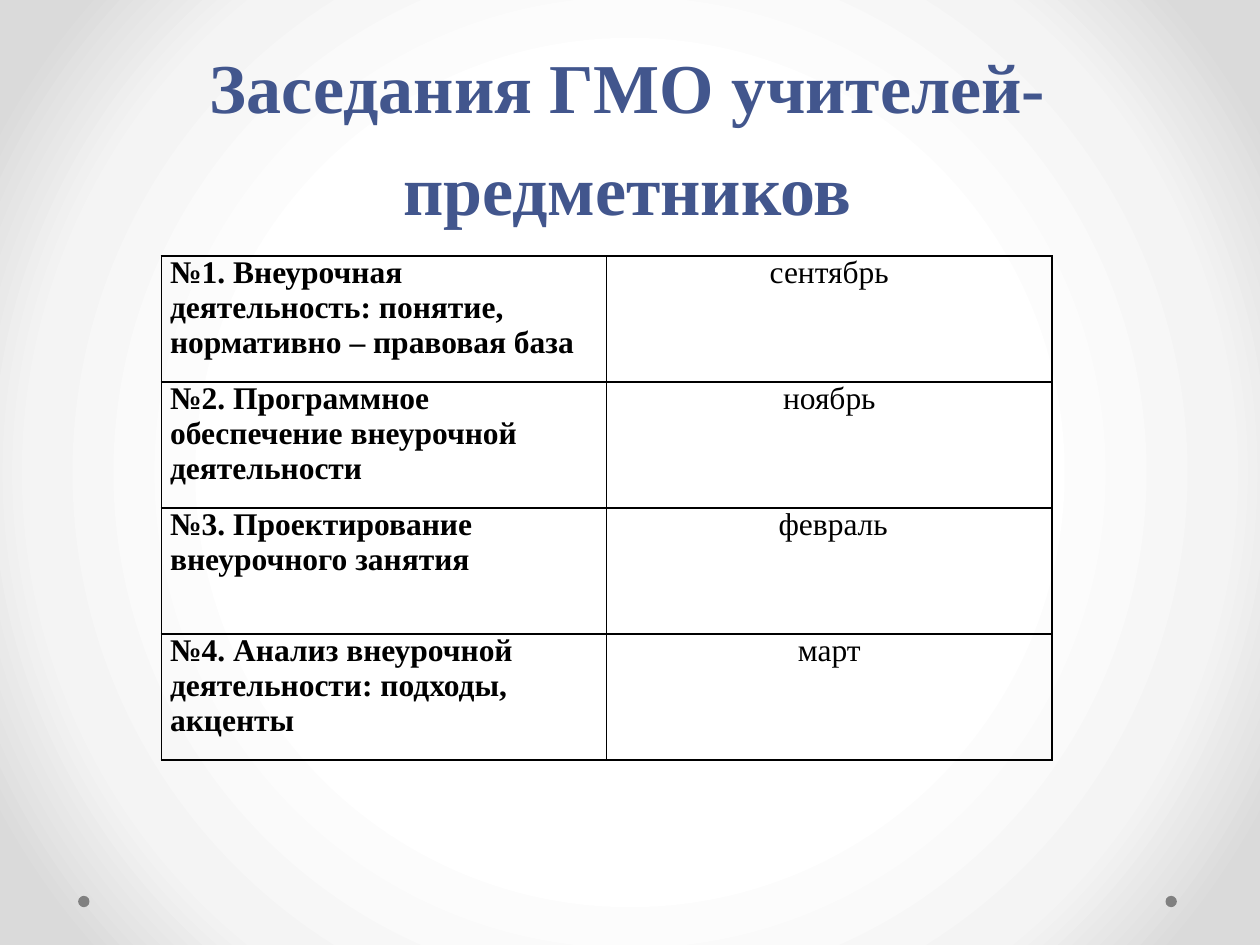
from pptx import Presentation
from pptx import util as u
from pptx.dml.color import RGBColor
from pptx.enum import shapes, text
from pptx.oxml import parse_xml
from pptx.oxml.ns import nsdecls

# Content
HEAD = "Заседания ГМО учителей-предметников"
ROWS = [
    ("№1. Внеурочная деятельность: понятие, нормативно – правовая база", "сентябрь"),
    ("№2. Программное обеспечение внеурочной деятельности", "ноябрь"),
    ("№3. Проектирование внеурочного занятия", " февраль"),
    ("№4. Анализ внеурочной деятельности: подходы, акценты", "март"),
]
STOPS = [(50, "FFFFFF"), (76, "F4F4F4"), (92, "DADADA")]
FONT = "Times New Roman"
LEFT, CENTER = text.PP_ALIGN.LEFT, text.PP_ALIGN.CENTER


def color(code):
    return RGBColor.from_string(code)


def write(frame, words, size=18, ink="000000", bold=False, align=LEFT, pitch=None):
    para = frame.paragraphs[0]
    para.alignment = align
    if pitch:
        para.line_spacing = u.Pt(pitch)
    run = para.add_run()
    run.text = words
    font = run.font
    font.name, font.size, font.bold = FONT, u.Pt(size), bold
    font.color.rgb = color(ink)


def border(cell, ink="000000", width=1):
    props = cell._tc.get_or_add_tcPr()
    for n, side in enumerate(("lnL", "lnR", "lnT", "lnB")):
        props.insert(n, parse_xml(
            f'<a:{side} {nsdecls("a")} w="{u.Pt(width)}"><a:solidFill>'
            f'<a:srgbClr val="{ink}"/></a:solidFill></a:{side}>'))


def backdrop(slide):
    stops = "".join(f'<a:gs pos="{pos * 1000}"><a:srgbClr val="{ink}"/></a:gs>'
                    for pos, ink in STOPS)
    slide._element.cSld.insert(0, parse_xml(
        f'<p:bg {nsdecls("p", "a")}><p:bgPr><a:gradFill rotWithShape="1">'
        f'<a:gsLst>{stops}</a:gsLst><a:path path="circle">'
        '<a:fillToRect l="50000" t="50000" r="50000" b="50000"/></a:path>'
        '</a:gradFill><a:effectLst/></p:bgPr></p:bg>'))


deck = Presentation()
deck.slide_width, deck.slide_height = u.Inches(10), u.Inches(7.5)
slide = deck.slides.add_slide(deck.slide_layouts[5])
backdrop(slide)

# Corner dots
for x in (9.25, 0.62):
    dot = slide.shapes.add_shape(shapes.MSO_SHAPE.OVAL, u.Inches(x), u.Inches(7.11),
                                 u.Inches(0.09), u.Inches(0.09))
    dot.shadow.inherit = False
    dot.fill.solid()
    dot.fill.fore_color.rgb = color("808080")
    dot.line.fill.background()

# Title
title = slide.shapes.title
title.left, title.top = u.Inches(0.48), u.Inches(0.37)
title.width, title.height = u.Inches(9), u.Inches(1.5)
frame = title.text_frame
frame.word_wrap = True
frame.auto_size = text.MSO_AUTO_SIZE.NONE
frame.vertical_anchor = text.MSO_ANCHOR.BOTTOM
write(frame, HEAD, size=40, ink="42568D", bold=True, align=CENTER, pitch=58)

# Meeting schedule
table = slide.shapes.add_table(len(ROWS), 2, u.Inches(1.28), u.Inches(2.03),
                               u.Inches(7.07), u.Inches(len(ROWS))).table
table.first_row = table.horz_banding = False
for r, row in enumerate(ROWS):
    for c, words in enumerate(row):
        cell = table.cell(r, c)
        cell.margin_left = cell.margin_right = u.Inches(0.07)
        cell.margin_top = cell.margin_bottom = 0
        cell.fill.background()
        border(cell)
        write(cell.text_frame, words, bold=c == 0, align=CENTER if c else LEFT)

deck.save("out.pptx")
